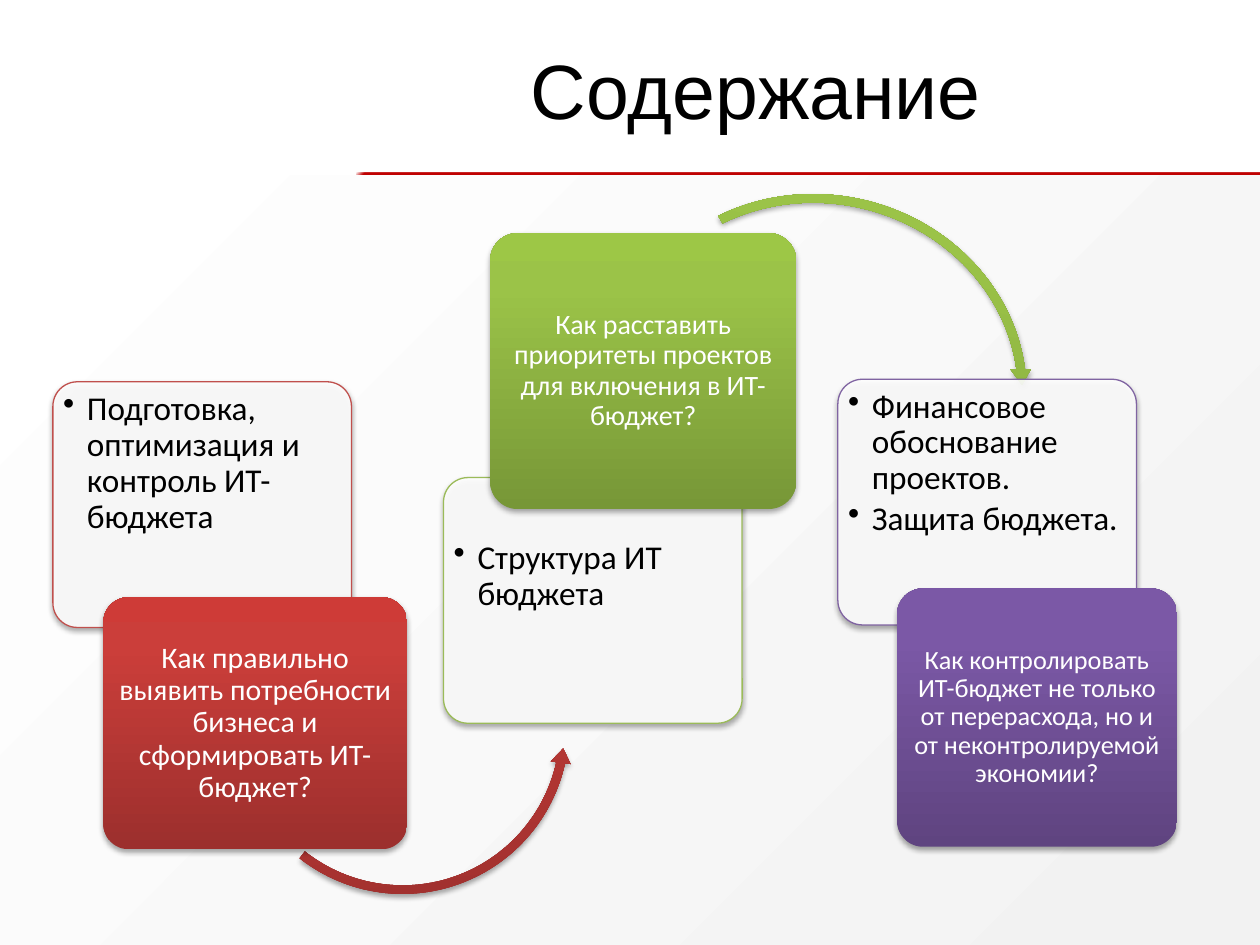
from lxml import etree
from pptx import Presentation
from pptx.dml.color import RGBColor
from pptx.enum.shapes import MSO_SHAPE
from pptx.enum.text import MSO_ANCHOR, PP_ALIGN
from pptx.oxml.ns import qn
from pptx.util import Inches, Pt

RECT = MSO_SHAPE.RECTANGLE
ROUND = MSO_SHAPE.ROUNDED_RECTANGLE
ARC = MSO_SHAPE.CIRCULAR_ARROW
LEFT_ARC = MSO_SHAPE.LEFT_CIRCULAR_ARROW
TOP, MIDDLE = MSO_ANCHOR.TOP, MSO_ANCHOR.MIDDLE
LEFT, CENTER = PP_ALIGN.LEFT, PP_ALIGN.CENTER

BLACK = RGBColor(0x00, 0x00, 0x00)
WHITE = RGBColor(0xFF, 0xFF, 0xFF)
PALE = RGBColor(0xF2, 0xF2, 0xF2)
CRIMSON = RGBColor(0xC0, 0x00, 0x00)
RED = RGBColor(0xC0, 0x50, 0x4D)
GREEN = RGBColor(0x9B, 0xBB, 0x59)
PURPLE = RGBColor(0x80, 0x64, 0xA2)
RED_FADE = (
    (0, RGBColor(0x9C, 0x2F, 0x2D)),
    (80, RGBColor(0xCB, 0x3E, 0x3A)),
    (100, RGBColor(0xCE, 0x3B, 0x37)),
)
GREEN_FADE = (
    (0, RGBColor(0x77, 0x97, 0x37)),
    (80, RGBColor(0x9B, 0xC3, 0x48)),
    (100, RGBColor(0x9D, 0xC7, 0x46)),
)
PURPLE_FADE = (
    (0, RGBColor(0x5F, 0x44, 0x80)),
    (80, RGBColor(0x7B, 0x58, 0xA6)),
    (100, RGBColor(0x7C, 0x57, 0xA8)),
)


def add(parent, tag, **attrs):
    return etree.SubElement(parent, qn(tag), {k: str(v) for k, v in attrs.items()})


def tint(parent, color, alpha=100):
    node = add(parent, "a:srgbClr", val=color)
    if alpha < 100:
        add(node, "a:alpha", val=alpha * 1000)


class Deck:
    body = "Calibri"
    head = "Arial"

    def __init__(self):
        self.file = Presentation()
        self.file.slide_width = Inches(10)
        self.file.slide_height = Inches(7.5)
        self.slide = self.file.slides.add_slide(self.file.slide_layouts[5])

    def shape(self, kind, box, adjust=(), turn=0):
        item = self.slide.shapes.add_shape(kind, *map(Inches, box))
        for i, value in enumerate(adjust):
            item.adjustments[i] = value
        item.rotation = turn
        item.line.fill.background()
        item.shadow.inherit = False
        return item

    def fade(self, item, stops, radial=False):
        fill = etree.Element(qn("a:gradFill"), rotWithShape="1")
        chain = add(fill, "a:gsLst")
        for pos, *color in stops:
            tint(add(chain, "a:gs", pos=pos * 1000), *color)
        if radial:
            path = add(fill, "a:path", path="circle")
            add(path, "a:fillToRect", r=100000, b=100000)
        else:
            add(fill, "a:lin", ang=270 * 60000, scaled=0)
        item._element.spPr.find(qn("a:prstGeom")).addnext(fill)

    def shade(self, item):
        effects = item._element.spPr.find(qn("a:effectLst"))
        shadow = add(effects, "a:outerShdw", blurRad=Pt(3.1), dist=Pt(1.8),
                     dir=90 * 60000, rotWithShape=0)
        tint(shadow, BLACK, 35)

    def panel(self, box, color):
        item = self.shape(ROUND, box, (0.1,))
        item.fill.solid()
        item.fill.fore_color.rgb = WHITE
        add(item.fill._xPr.find(".//" + qn("a:srgbClr")), "a:alpha", val=90000)
        item.line.color.rgb = color
        item.line.width = Pt(0.75)
        self.shade(item)

    def block(self, kind, box, stops, adjust=(0.1,), turn=0):
        item = self.shape(kind, box, adjust, turn)
        self.fade(item, stops)
        self.shade(item)

    def text(self, box, lines, size, color, pad, align=LEFT, anchor=TOP, after=15, bullet=False):
        frame = self.slide.shapes.add_textbox(*map(Inches, box)).text_frame
        side, edge = map(Inches, pad)
        look = {"word_wrap": True, "vertical_anchor": anchor, "margin_left": side,
                "margin_right": side, "margin_top": edge, "margin_bottom": edge}
        for name, value in look.items():
            setattr(frame, name, value)
        for i, line in enumerate(lines):
            para = frame.add_paragraph() if i else frame.paragraphs[0]
            para.alignment = align
            para.line_spacing = 0.9
            props = para._p.get_or_add_pPr()
            add(add(props, "a:spcAft"), "a:spcPct", val=after * 1000)
            if bullet:
                para.level = 1
                props.set("marL", str(Inches(0.19)))
                props.set("indent", str(-Inches(0.19)))
                add(props, "a:buChar", char="•")
            run = para.add_run()
            run.text = line
            self.font(run.font, self.body, size, color)

    def font(self, font, name, size, color):
        for key, value in {"name": name, "size": Pt(size)}.items():
            setattr(font, key, value)
        font.color.rgb = color

    def title(self, box, words):
        item = self.slide.shapes.title
        for key, value in zip(("left", "top", "width", "height"), box):
            setattr(item, key, Inches(value))
        item.text_frame.text = words
        item.text_frame.vertical_anchor = MIDDLE
        para = item.text_frame.paragraphs[0]
        para.alignment = CENTER
        self.font(para.runs[0].font, self.head, 44, BLACK)

    def topic(self, left, top, color, drop, lines):
        self.panel((left, top, 2.37, 1.95), color)
        self.text((left + 0.04, top + drop, 2.28, 1.44), lines, 19, BLACK,
                  (0.04, 0.04), bullet=True)

    def ask(self, box, stops, size, words):
        self.block(ROUND, box, stops)
        left, top, width, height = box
        inner = (left + 0.06, top + 0.06, width - 0.12, height - 0.12)
        self.text(inner, [words], size, WHITE, (0.03, 0.02), CENTER, MIDDLE, 35)


def main():
    deck = Deck()
    rule = deck.shape(RECT, (2.83, 1.37, 7.17, 0.05))
    deck.fade(rule, ((0, CRIMSON, 0), (1, CRIMSON), (100, CRIMSON)), True)
    ground = deck.shape(RECT, (0, 1.39, 10, 6.11))
    deck.fade(ground, ((0, WHITE), (100, PALE)), True)
    deck.title((2.5, 0.08, 7, 1.25), "Содержание")

    deck.topic(0.42, 3.03, RED, 0.04, ["Подготовка, оптимизация и контроль ИТ-бюджета"])
    deck.block(LEFT_ARC, (1.83, 4.41, 2.73, 2.73), RED_FADE,
               (0.025, 3.061, 11.893, 81.322, 0.029), 352.7)
    deck.ask((0.82, 4.74, 2.41, 2), RED_FADE, 17,
             "Как правильно выявить потребности бизнеса и сформировать ИТ-бюджет?")

    deck.topic(3.52, 3.79, GREEN, 0.46, ["Структура ИТ бюджета"])
    deck.block(ARC, (4.82, 1.5, 3.38, 3.12), GREEN_FADE,
               (0.022, 2.66, 205.642, 135.812, 0.026), 12.6)
    deck.ask((3.89, 1.85, 2.43, 2.19), GREEN_FADE, 16,
             "Как расставить приоритеты проектов для включения в ИТ-бюджет?")

    deck.topic(6.65, 3.01, PURPLE, 0.04, ["Финансовое обоснование проектов.", "Защита бюджета."])
    deck.ask((7.12, 4.67, 2.22, 2.05), PURPLE_FADE, 15,
             "Как контролировать ИТ-бюджет не только от перерасхода, "
             "но и от неконтролируемой экономии?")
    deck.file.save("out.pptx")


if __name__ == "__main__":
    main()
